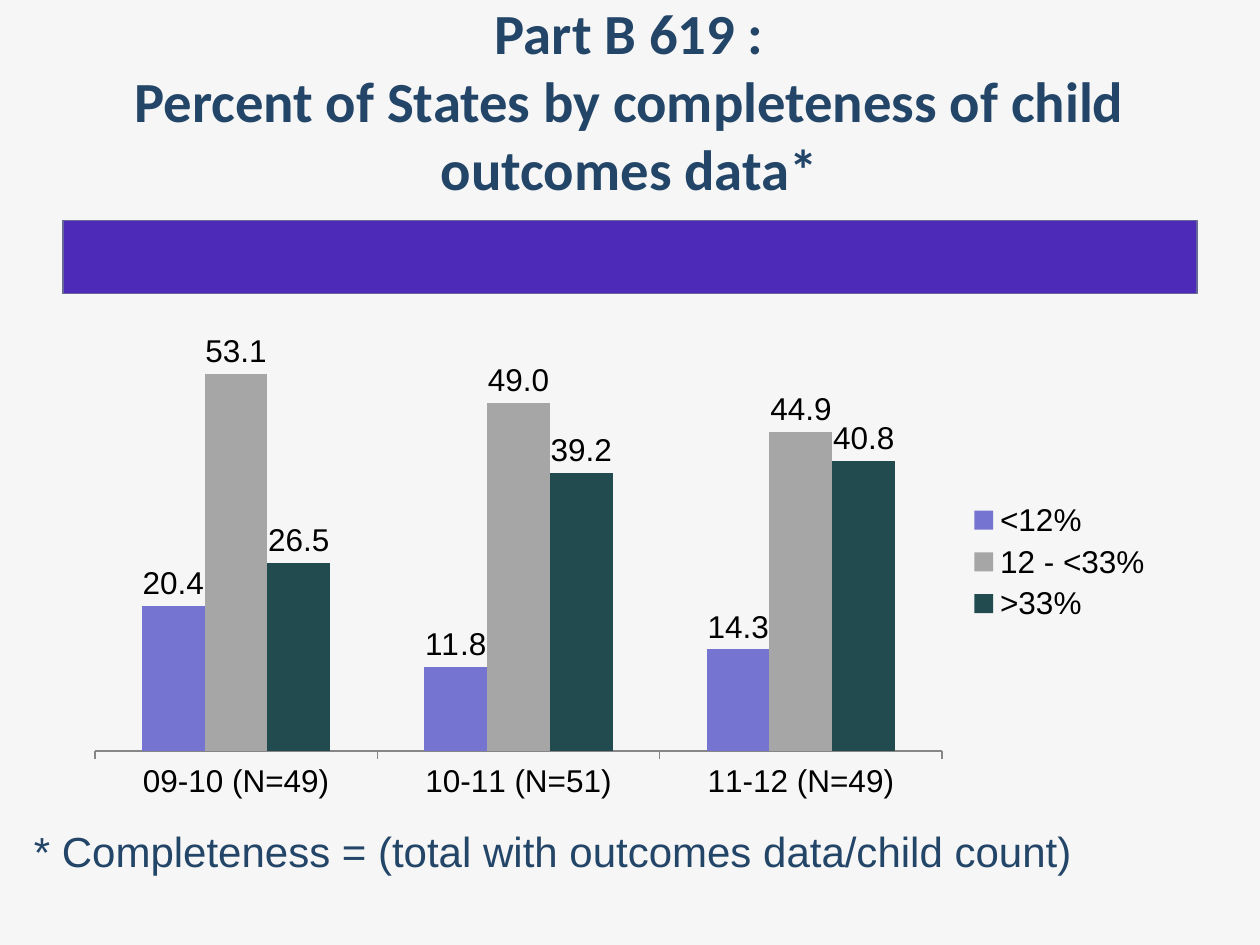
from pptx import Presentation
from pptx.chart.data import CategoryChartData
from pptx.dml.color import RGBColor
from pptx.enum.chart import XL_CHART_TYPE, XL_LABEL_POSITION, XL_LEGEND_POSITION, XL_TICK_MARK
from pptx.enum.shapes import MSO_SHAPE
from pptx.enum.text import MSO_ANCHOR, MSO_AUTO_SIZE, PP_ALIGN
from pptx.util import Inches, Pt

BACKGROUND = RGBColor(0xF6, 0xF6, 0xF6)
NAVY = RGBColor(0x22, 0x45, 0x68)
PURPLE = RGBColor(0x4E, 0x2A, 0xB8)
BAND_LINE = RGBColor(0x66, 0x66, 0x99)
AXIS_GRAY = RGBColor(0x86, 0x86, 0x86)
BLACK = RGBColor(0, 0, 0)

TITLE = "Part B 619 :\nPercent of States by completeness of child outcomes data*"
FOOTNOTE = "* Completeness = (total with outcomes data/child count)"
CATEGORIES = ["09-10 (N=49)", "10-11 (N=51)", "11-12 (N=49)"]
SERIES = [
    ("<12%", (20.4, 11.8, 14.3), RGBColor(0x75, 0x75, 0xD1)),
    ("12 - <33%", (53.1, 49.0, 44.9), RGBColor(0xA6, 0xA6, 0xA6)),
    (">33%", (26.5, 39.2, 40.8), RGBColor(0x22, 0x4B, 0x50)),
]


def box(left, top, width, height):
    return Inches(left), Inches(top), Inches(width), Inches(height)


def style_font(font, name, size, color, bold=False):
    font.name = name
    font.size = Pt(size)
    font.color.rgb = color
    font.bold = bold


def add_band(slide):
    band = slide.shapes.add_shape(MSO_SHAPE.RECTANGLE, *box(0.5, 1.75, 9, 0.58))
    band.shadow.inherit = False
    band.fill.solid()
    band.fill.fore_color.rgb = PURPLE
    band.line.color.rgb = BAND_LINE
    band.line.width = Pt(0.75)


def set_title(slide):
    title = slide.shapes.title
    title.left, title.top, title.width, title.height = box(0.58, 0.17, 8.83, 1.25)
    frame = title.text_frame
    frame.auto_size = MSO_AUTO_SIZE.NONE
    frame.vertical_anchor = MSO_ANCHOR.MIDDLE
    paragraph = frame.paragraphs[0]
    paragraph.text = TITLE
    paragraph.alignment = PP_ALIGN.CENTER
    for run in paragraph.runs:
        style_font(run.font, "Calibri", 32.4, NAVY, bold=True)


def add_completeness_chart(slide):
    data = CategoryChartData(number_format="0.0")
    data.categories = CATEGORIES
    for name, values, _ in SERIES:
        data.add_series(name, values)
    chart = slide.shapes.add_chart(
        XL_CHART_TYPE.COLUMN_CLUSTERED, *box(0.58, 2.5, 8.67, 3.92), data
    ).chart
    style_font(chart.font, "Arial", 18, BLACK)
    chart.has_title = False
    chart.has_legend = True
    chart.legend.position = XL_LEGEND_POSITION.RIGHT
    chart.legend.include_in_layout = False

    chart.category_axis.major_tick_mark = XL_TICK_MARK.OUTSIDE
    chart.category_axis.format.line.color.rgb = AXIS_GRAY
    value_axis = chart.value_axis
    value_axis.visible = False
    value_axis.has_major_gridlines = False
    value_axis.minimum_scale, value_axis.maximum_scale = 0, 60

    plot = chart.plots[0]
    plot.vary_by_categories = False
    plot.gap_width = 150
    plot.overlap = 0
    for series, (_, _, color) in zip(plot.series, SERIES):
        series.format.fill.solid()
        series.format.fill.fore_color.rgb = color
        labels = series.data_labels
        labels.show_value = True
        labels.position = XL_LABEL_POSITION.OUTSIDE_END
        labels.number_format = "0.0"
        labels.number_format_is_linked = False


def add_footnote(slide):
    frame = slide.shapes.add_textbox(*box(0.17, 6.5, 8.52, 0.5)).text_frame
    frame.word_wrap = False
    frame.auto_size = MSO_AUTO_SIZE.SHAPE_TO_FIT_TEXT
    frame.text = FOOTNOTE
    style_font(frame.paragraphs[0].runs[0].font, "Arial", 24, NAVY)


def main():
    presentation = Presentation()
    presentation.slide_width, presentation.slide_height = Inches(10), Inches(7.5)
    slide = presentation.slides.add_slide(presentation.slide_layouts[5])
    slide.background.fill.solid()
    slide.background.fill.fore_color.rgb = BACKGROUND
    add_band(slide)
    set_title(slide)
    add_completeness_chart(slide)
    add_footnote(slide)
    presentation.save("out.pptx")


if __name__ == "__main__":
    main()
